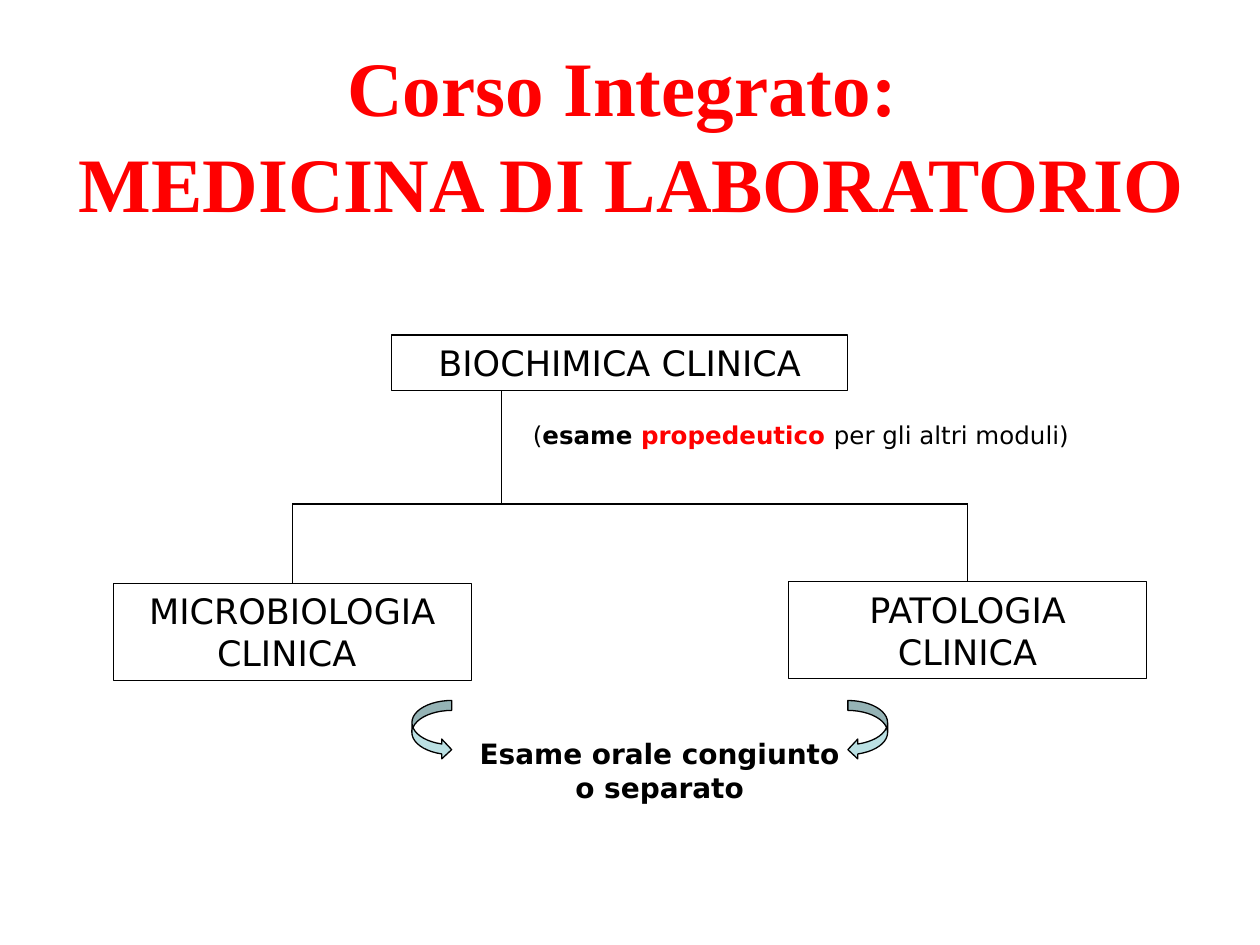
import pptx
import pptx.dml.color
import pptx.enum.shapes
import pptx.enum.text
import pptx.oxml.ns
import pptx.util

Pt = pptx.util.Pt
SHAPE = pptx.enum.shapes.MSO_SHAPE
ANCHOR = pptx.enum.text.MSO_ANCHOR
CENTER = pptx.enum.text.PP_ALIGN.CENTER
LEFT = pptx.enum.text.PP_ALIGN.LEFT
BLACK, RED, AQUA = "000000", "FF0000", "BBE0E3"


def rgb(value):
    return pptx.dml.color.RGBColor.from_string(value)


def add_run(p, text, size=20, font="DejaVu Sans", color=BLACK, bold=False):
    r = p.add_run()
    r.text = text
    r.font.size, r.font.name, r.font.bold = Pt(size), font, bold
    r.font.color.rgb = rgb(color)


def prepare_frame(sp, align=CENTER, anchor=ANCHOR.TOP):
    """Set wrapping and anchor, and return the first paragraph."""
    tf = sp.text_frame
    tf.word_wrap = True
    tf.auto_size = pptx.enum.text.MSO_AUTO_SIZE.NONE
    tf.vertical_anchor = anchor
    p = tf.paragraphs[0]
    p.alignment = align
    return p


def add_outlined(s, kind, box, fill=None):
    sp = s.shapes.add_shape(kind, *map(Pt, box))
    sp.shadow.inherit = False
    if fill:
        sp.fill.solid()
        sp.fill.fore_color.rgb = rgb(fill)
    else:
        sp.fill.background()
    sp.line.color.rgb = rgb(BLACK)
    sp.line.width = Pt(0.75)
    return sp


def add_module(s, name, box):
    sp = add_outlined(s, SHAPE.RECTANGLE, box)
    add_run(prepare_frame(sp), name)
    return sp


def add_line(s, x1, y1, x2, y2):
    line = s.shapes.add_connector(
        pptx.enum.shapes.MSO_CONNECTOR.STRAIGHT, *map(Pt, (x1, y1, x2, y2)))
    line.line.color.rgb = rgb(BLACK)
    line.line.width = Pt(0.75)
    sp_pr = line._element.spPr
    sp_pr.append(sp_pr.makeelement(pptx.oxml.ns.qn("a:effectLst"), {}))
    return line


def add_text(s, box, runs, align=LEFT):
    sp = s.shapes.add_textbox(*map(Pt, box))
    p = prepare_frame(sp, align)
    for text, style in runs:
        add_run(p, text, **style)


def place_title(s, box, lines):
    sp = s.shapes.title
    sp.left, sp.top, sp.width, sp.height = map(Pt, box)
    p = prepare_frame(sp, anchor=ANCHOR.BOTTOM)
    for i, text in enumerate(lines):
        if i:
            p = sp.text_frame.add_paragraph()
            p.alignment = CENTER
            p.space_before = Pt(2)
        add_run(p, text, size=44, font="Times New Roman", color=RED, bold=True)


def build_tree(s, left, top, width):
    """Draw the first module, with the two that depend on it below."""
    child_w, child_h, bar_y = 204.5, 55.4, top + 96.5
    add_module(s, "BIOCHIMICA CLINICA", (left + 159.1, top, 260.6, 31.7))
    trunk_x = left + 221.8
    add_line(s, trunk_x, top + 31.7, trunk_x, bar_y)
    add_line(s, left + child_w / 2, bar_y, left + width - child_w / 2, bar_y)
    for name, x, y in (("MICROBIOLOGIA CLINICA ", left, top + 141.9),
                       ("PATOLOGIA CLINICA", left + width - child_w, top + 141)):
        child = add_module(s, name, (x, y, child_w, child_h))
        middle = x + child_w / 2
        add_line(s, middle, bar_y, middle, y).end_connect(child, 0)
    add_text(s, (left + 232.6, top + 44.7, 402.5, 24.5), [
        ("(", dict(size=14)),
        ("esame ", dict(size=14, bold=True)),
        ("propedeutico ", dict(size=14, bold=True, color=RED)),
        ("per gli altri moduli)", dict(size=14))])


def build_exam(s, left, top, width):
    """Draw the joint exam between two arrows curving inwards."""
    arrow_w, arrow_h = 22.7, 33.8
    for kind, x in ((SHAPE.CURVED_RIGHT_ARROW, left),
                    (SHAPE.CURVED_LEFT_ARROW, left + width - arrow_w)):
        sp = add_outlined(s, kind, (x, top, arrow_w, arrow_h), AQUA)
        for i, value in enumerate((0.25, 0.5, 0.25)):
            sp.adjustments[i] = value
    add_text(s, (left + 28.1, top + 17.3, 226.8, 46.1),
             [("Esame orale congiunto o separato", dict(size=16, bold=True))],
             align=CENTER)


def main():
    prs = pptx.Presentation()
    prs.slide_width, prs.slide_height = Pt(720), Pt(540)
    s = prs.slides.add_slide(prs.slide_layouts[5])
    place_title(s, (31, 20.2, 660.2, 113.8),
                ["Corso Integrato: ", "MEDICINA DI LABORATORIO"])
    build_tree(s, 64.8, 191.5, 590.4)
    build_exam(s, 235.4, 400.3, 271.8)
    prs.save("out.pptx")


if __name__ == "__main__":
    main()
